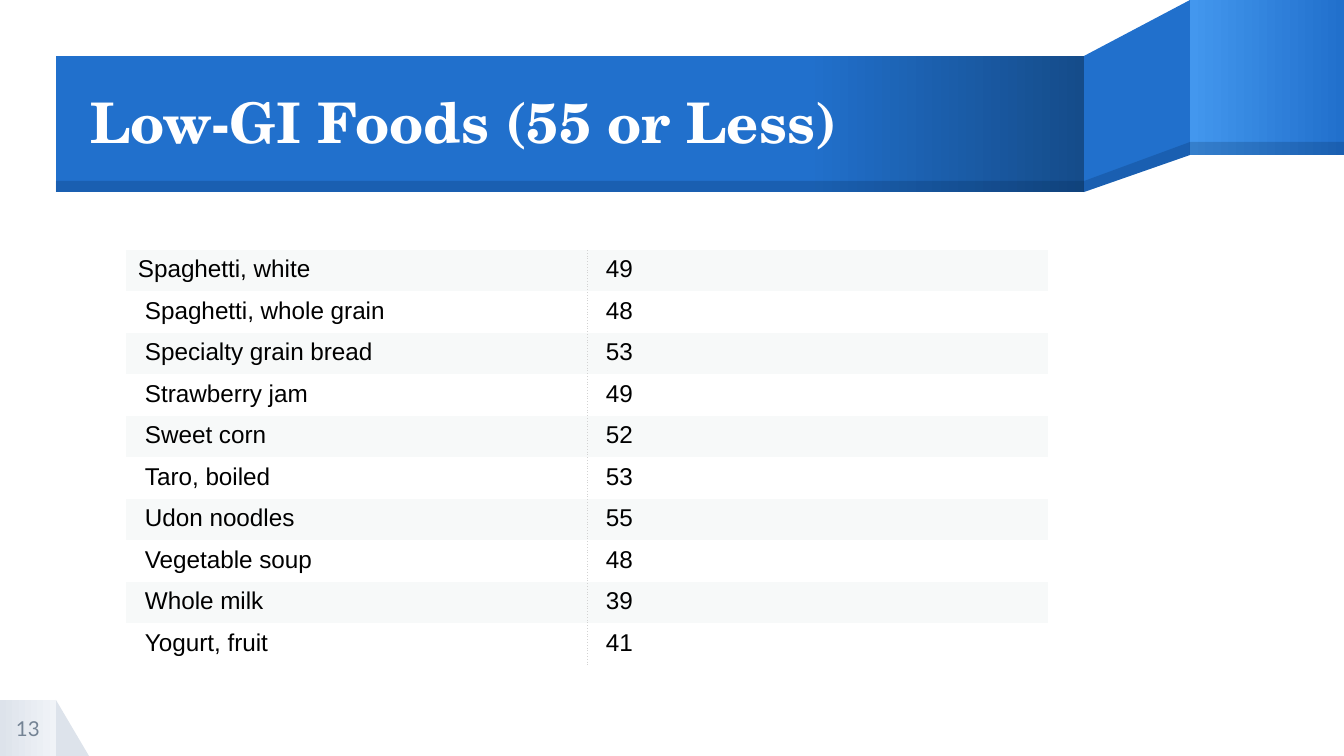
from dataclasses import dataclass

from lxml.etree import SubElement
from pptx import Presentation
from pptx.dml.color import RGBColor
from pptx.enum.shapes import MSO_SHAPE
from pptx.enum.text import MSO_ANCHOR, MSO_AUTO_SIZE, PP_ALIGN
from pptx.oxml import parse_xml
from pptx.oxml.ns import nsdecls, qn
from pptx.util import Pt

EMU_PER_PX = 914400 / 134.4
NO_GRID_STYLE = "{2D5ABB26-0587-4C30-8999-92F81FD0307C}"


@dataclass(frozen=True)
class Theme:
    ribbon: str = "2170CC"
    ribbon_light: str = "4397EE"
    ribbon_dark: str = "154C8A"
    shade: str = "001F46"
    shade_opacity: int = 20
    tab: str = "DDE3EB"
    tab_light: str = "F0F3F7"
    page_number: str = "748394"
    title: str = "FFFFFF"
    body: str = "000000"
    row_fills: tuple = ("F7F9F9", "FFFFFF")
    divider: str = "D3D3D3"
    title_font: str = "TeX Gyre Schola"
    body_font: str = "Arial"
    page_font: str = "Lato"
    title_size: int = 30
    body_size: int = 13
    page_size: int = 11


THEME = Theme()

FOODS = [
    ("Spaghetti, white", 49),
    ("Spaghetti, whole grain", 48),
    ("Specialty grain bread", 53),
    ("Strawberry jam", 49),
    ("Sweet corn", 52),
    ("Taro, boiled", 53),
    ("Udon noodles", 55),
    ("Vegetable soup", 48),
    ("Whole milk", 39),
    ("Yogurt, fruit", 41),
]


def px(length):
    return round(length * EMU_PER_PX)


def box(left, top, width, height):
    return px(left), px(top), px(width), px(height)


def fill_solid(shape, color, opacity=100):
    shape.shadow.inherit = False
    shape.line.fill.background()
    shape.fill.solid()
    shape.fill.fore_color.rgb = RGBColor.from_string(color)
    if opacity < 100:
        for rgb in shape.element.spPr.iter(qn("a:srgbClr")):
            SubElement(rgb, qn("a:alpha"), val=str(opacity * 1000))


def fill_gradient(shape, stops):
    """Fill left to right with (percent, color) stops."""
    shape.shadow.inherit = False
    shape.line.fill.background()
    shape.fill.gradient()
    shape.fill.gradient_angle = 0
    stop_list = next(shape.element.iter(qn("a:gsLst")))
    for old_stop in list(stop_list):
        stop_list.remove(old_stop)
    for percent, color in stops:
        stop = SubElement(stop_list, qn("a:gs"), pos=str(percent * 1000))
        SubElement(stop, qn("a:srgbClr"), val=color)


def add_block(slide, bounds, preset=MSO_SHAPE.RECTANGLE):
    return slide.shapes.add_shape(preset, *box(*bounds))


def add_polygon(slide, points):
    builder = slide.shapes.build_freeform(*points[0], scale=EMU_PER_PX)
    builder.add_line_segments(points[1:], close=True)
    return builder.convert_to_shape()


def add_run(paragraph, text, font, size, color, bold=False):
    run = paragraph.add_run()
    run.text = text
    run.font.name = font
    run.font.size = Pt(size)
    run.font.bold = bold
    run.font.color.rgb = RGBColor.from_string(color)


def prepare_frame(frame, alignment):
    """Remove insets, centre vertically and return the first paragraph."""
    frame.margin_left = frame.margin_right = 0
    frame.margin_top = frame.margin_bottom = 0
    frame.word_wrap = True
    frame.auto_size = MSO_AUTO_SIZE.NONE
    frame.vertical_anchor = MSO_ANCHOR.MIDDLE
    paragraph = frame.paragraphs[0]
    paragraph.alignment = alignment
    return paragraph


def add_page_tab(slide, number):
    corner = (0, 700, 56, 56)
    fold = add_block(slide, (56, 700, 33, 56), MSO_SHAPE.RIGHT_TRIANGLE)
    fill_solid(fold, THEME.tab)
    tab = add_block(slide, corner)
    fill_gradient(tab, [(0, THEME.tab), (100, THEME.tab_light)])
    label = slide.shapes.add_textbox(*box(*corner))
    paragraph = prepare_frame(label.text_frame, PP_ALIGN.CENTER)
    add_run(paragraph, number, THEME.page_font, THEME.page_size, THEME.page_number)


def add_ribbon(slide):
    fold = add_polygon(slide, [(1190, 0), (1084, 56), (1084, 192), (1190, 155)])
    fill_solid(fold, THEME.ribbon)
    tail = add_block(slide, (1190, 0, 154, 155))
    fill_gradient(tail, [(0, THEME.ribbon_light), (100, THEME.ribbon)])
    banner = add_block(slide, (56, 56, 1028, 136))
    fill_gradient(banner, [(0, THEME.ribbon), (73, THEME.ribbon),
                           (100, THEME.ribbon_dark)])

    shades = [
        add_polygon(slide, [(1190, 142), (1084, 181), (1084, 192), (1190, 155)]),
        add_block(slide, (1190, 142, 154, 13)),
        add_block(slide, (56, 181, 1028, 11)),
    ]
    for shade in shades:
        fill_solid(shade, THEME.shade, THEME.shade_opacity)


def set_title(slide, text):
    title = slide.shapes.title
    title.left, title.top, title.width, title.height = box(90, 58, 993, 135)
    paragraph = prepare_frame(title.text_frame, PP_ALIGN.LEFT)
    paragraph.line_spacing = 0.9
    add_run(paragraph, text, THEME.title_font, THEME.title_size, THEME.title, bold=True)
    slide.shapes.element.append(title.element)  # in front of the ribbon


def add_dotted_border(cell, side):
    border = parse_xml(
        f'<a:{side} {nsdecls("a")} w="{Pt(0.5)}"><a:solidFill>'
        f'<a:srgbClr val="{THEME.divider}"/></a:solidFill>'
        f'<a:prstDash val="sysDot"/></a:{side}>')
    cell._tc.get_or_add_tcPr().insert(0, border)


def add_food_table(slide, foods):
    bounds = box(126, 250, 922, 415)
    frame = slide.shapes.add_table(len(foods), 2, *bounds)
    table = frame.table
    table.first_row = table.horz_banding = False
    next(frame.element.iter(qn("a:tableStyleId"))).text = NO_GRID_STYLE

    for row_index, food in enumerate(foods):
        table.rows[row_index].height = bounds[3] // len(foods)
        for column, (value, divider_side) in enumerate(zip(food, ("lnR", "lnL"))):
            cell = table.cell(row_index, column)
            is_first = row_index == column == 0
            cell.margin_left = px(12 if is_first else 19)
            cell.margin_right = px(12)
            cell.margin_top = cell.margin_bottom = px(6)
            cell.fill.solid()
            cell.fill.fore_color.rgb = RGBColor.from_string(
                THEME.row_fills[row_index % 2])
            add_run(cell.text_frame.paragraphs[0], str(value),
                    THEME.body_font, THEME.body_size, THEME.body)
            add_dotted_border(cell, divider_side)


def main():
    deck = Presentation()
    deck.slide_width, deck.slide_height = px(1344), px(756)
    slide = deck.slides.add_slide(deck.slide_layouts[5])
    add_ribbon(slide)
    set_title(slide, "Low-GI Foods (55 or Less)")
    add_page_tab(slide, "13")
    add_food_table(slide, FOODS)
    deck.save("out.pptx")


if __name__ == "__main__":
    main()
